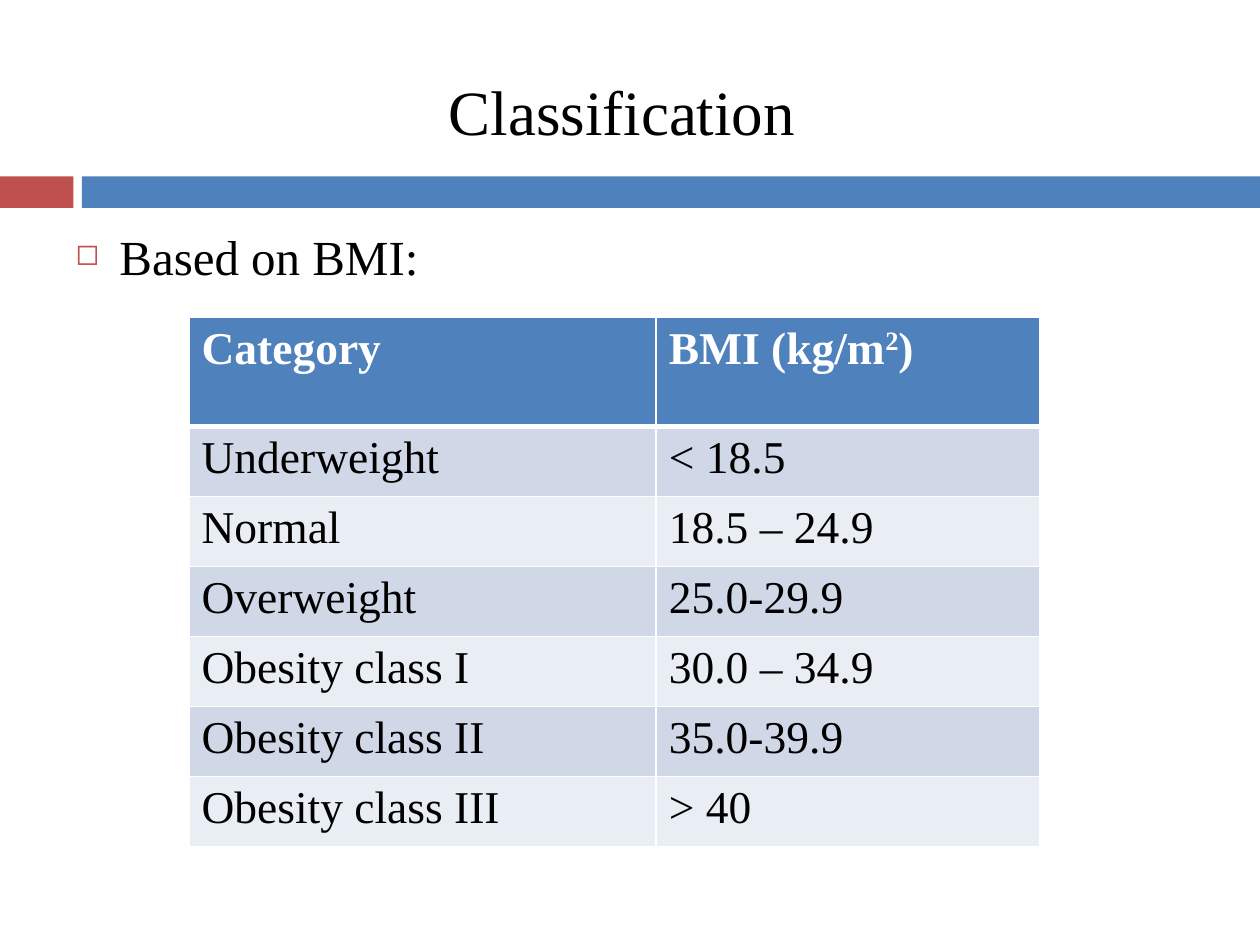
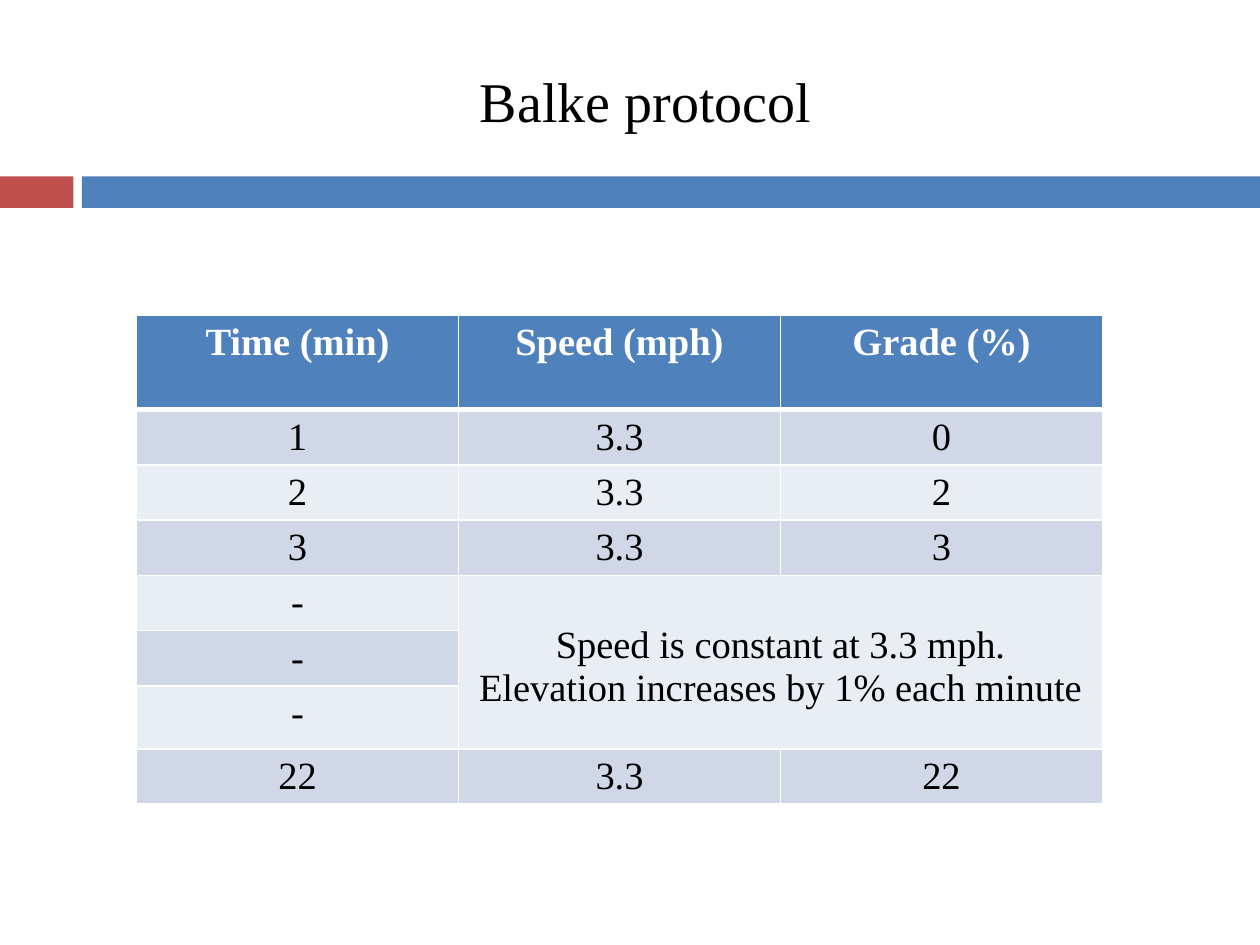
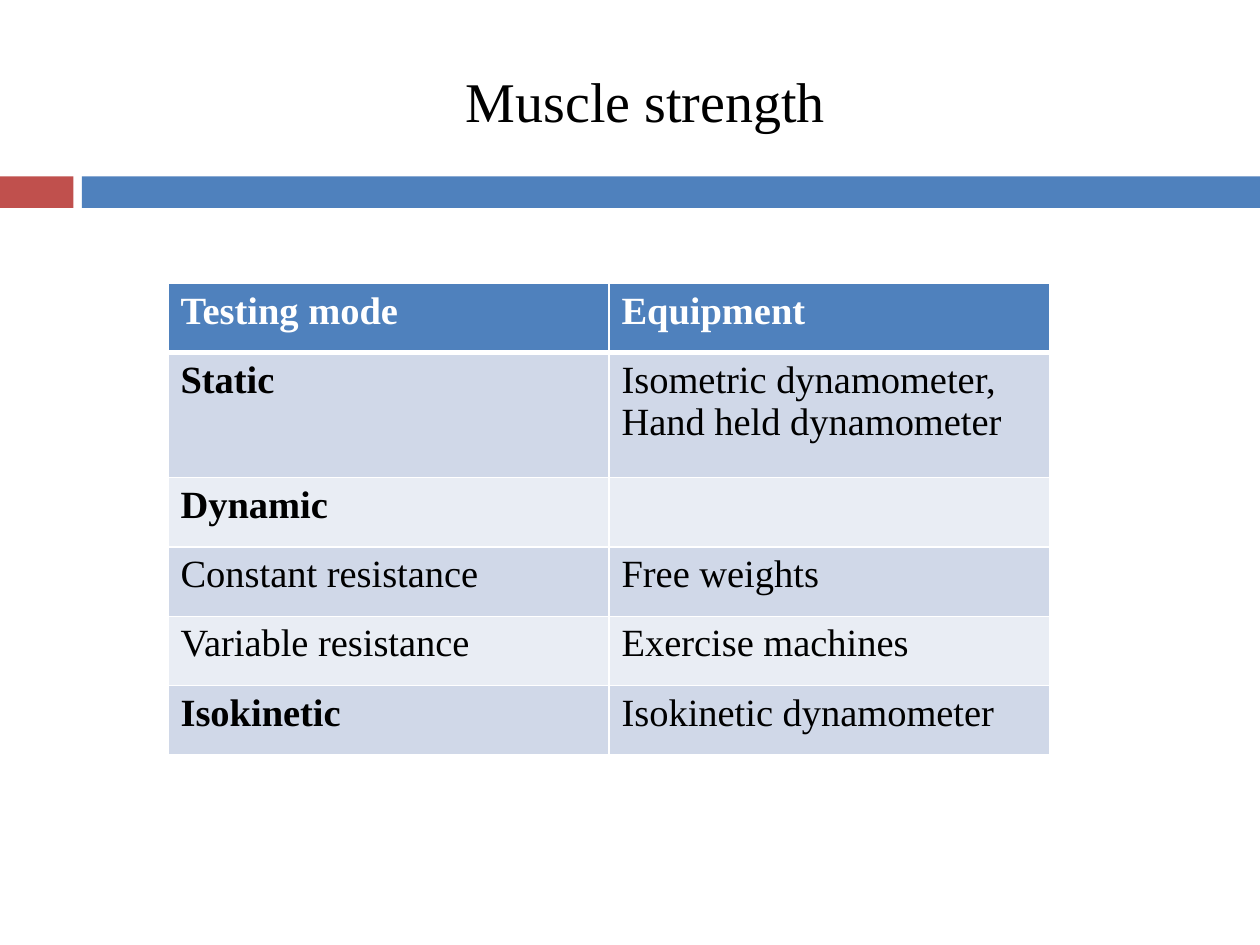
from lxml.etree import SubElement
from pptx import Presentation
from pptx.dml.color import RGBColor
from pptx.enum.shapes import MSO_SHAPE
from pptx.enum.text import MSO_ANCHOR, MSO_AUTO_SIZE, PP_ALIGN
from pptx.oxml.ns import qn
from pptx.util import Inches, Pt

FONT = "Times New Roman"
BLACK, WHITE = "000000", "FFFFFF"
BLUE, RED = "4F81BD", "C0504D"
STRIPES = ["E9EDF4", "D0D8E8"]
COLUMNS, ROWS = 120, 90


def color(hex_text):
    return RGBColor.from_string(hex_text)


def write(text_frame, text, size=22, ink=BLACK, bold=False, align=PP_ALIGN.LEFT):
    for index, line in enumerate(text.split("\n")):
        paragraph = text_frame.add_paragraph() if index else text_frame.paragraphs[0]
        paragraph.alignment = align
        for part, content in enumerate(line.split("^")):
            if not content:
                continue
            run = paragraph.add_run()
            run.text = content
            run.font.name = FONT
            run.font.size = Pt(size)
            run.font.bold = bold
            run.font.color.rgb = color(ink)
            if part % 2:
                run.font._element.set("baseline", "30000")


def add_bullet(paragraph, symbol, ink, percent):
    properties = paragraph._p.get_or_add_pPr()
    indent = Inches(0.35)
    properties.set("marL", str(indent))
    properties.set("indent", str(-indent))
    bullet_color = SubElement(properties, qn("a:buClr"))
    SubElement(bullet_color, qn("a:srgbClr"), val=ink)
    SubElement(properties, qn("a:buSzPct"), val=str(percent * 1000))
    SubElement(properties, qn("a:buChar"), char=symbol)


def add_borders(cell, **widths):
    properties = cell._tc.get_or_add_tcPr()
    for side in "LRTB":
        line = SubElement(properties, qn(f"a:ln{side}"), w=str(Pt(widths.get(side, 1))))
        fill = SubElement(line, qn("a:solidFill"))
        SubElement(fill, qn("a:srgbClr"), val=WHITE)


class Deck:
    def __init__(self):
        self.presentation = Presentation()
        self.presentation.slide_width = Inches(10)
        self.presentation.slide_height = Inches(7.5)
        self.column = self.presentation.slide_width / COLUMNS
        self.row = self.presentation.slide_height / ROWS
        self.slide = None

    def place(self, left, top, width, height):
        return (round(left * self.column), round(top * self.row),
                round(width * self.column), round(height * self.row))

    def add_slide(self, title, area=(8, 3, 107, 13), size=32):
        self.slide = self.presentation.slides.add_slide(self.presentation.slide_layouts[5])
        self.band(0, 7, RED)
        self.band(7.8, COLUMNS - 7.8, BLUE)
        shape = self.slide.shapes.title
        shape.left, shape.top, shape.width, shape.height = self.place(*area)
        shape.text_frame.auto_size = MSO_AUTO_SIZE.NONE
        shape.text_frame.vertical_anchor = MSO_ANCHOR.MIDDLE
        write(shape.text_frame, title, size=size, align=PP_ALIGN.CENTER)

    def band(self, left, width, ink):
        shape = self.slide.shapes.add_shape(MSO_SHAPE.RECTANGLE, *self.place(left, 16.8, width, 3))
        shape.shadow.inherit = False
        shape.fill.solid()
        shape.fill.fore_color.rgb = color(ink)
        shape.line.fill.background()

    def bullet_text(self, text, area, size):
        text_frame = self.slide.shapes.add_textbox(*self.place(*area)).text_frame
        text_frame.word_wrap = True
        add_bullet(text_frame.paragraphs[0], "◻", RED, 60)
        write(text_frame, text, size=size)

    def table(self, left, top, widths, heights, content, size=22,
              align=PP_ALIGN.LEFT, bold_labels=()):
        area = self.place(left, top, sum(widths), sum(heights))
        table = self.slide.shapes.add_table(len(heights), len(widths), *area).table
        for column, width in zip(table.columns, widths):
            column.width = round(width * self.column)
        for row, height in zip(table.rows, heights):
            row.height = round(height * self.row)
        for row_index, texts in enumerate(content):
            header = row_index == 0
            for column_index, text in enumerate(texts):
                cell = table.cell(row_index, column_index)
                add_borders(cell, T=3 if row_index == 1 else 1, B=3 if header else 1)
                cell.fill.solid()
                cell.fill.fore_color.rgb = color(BLUE if header else STRIPES[row_index % 2])
                write(cell.text_frame, text, size=size, ink=WHITE if header else BLACK,
                      bold=header or text in bold_labels, align=align)
        return table


def main():
    deck = Deck()

    deck.add_slide("Classification ", area=(6, 5, 108, 11), size=36)
    deck.bullet_text("Based on BMI:", (6, 21, 108, 62), size=28)
    deck.table(18, 30.24, [44.5, 36.5], [10.4] + [6.67] * 6, [
        ("Category", "BMI (kg/m^2^)"),
        ("Underweight", "< 18.5"),
        ("Normal", "18.5 – 24.9"),
        ("Overweight", "25.0-29.9"),
        ("Obesity class I", "30.0 – 34.9"),
        ("Obesity class II", "35.0-39.9"),
        ("Obesity class III", "> 40"),
    ], size=26)

    deck.add_slide("Balke protocol")
    constant_speed = "Speed is constant at 3.3 mph.\nElevation increases by 1% each minute"
    protocol = deck.table(13, 30, [92 / 3] * 3, [9] + [5.25] * 5 + [6, 5.25], [
        ("Time (min)", "Speed (mph)", "Grade (%)"),
        ("1", "3.3", "0"),
        ("2", "3.3", "2"),
        ("3", "3.3", "3"),
        ("-", constant_speed, ""),
        ("-", "", ""),
        ("-", "", ""),
        ("22", "3.3", "22"),
    ], align=PP_ALIGN.CENTER)
    speed_note = protocol.cell(4, 1)
    speed_note.merge(protocol.cell(6, 2))
    speed_note.margin_top = Inches(0.39)

    deck.add_slide("Muscle strength")
    deck.table(16, 27, [42, 42], [6.6, 11.9] + [6.6] * 4, [
        ("Testing mode", "Equipment"),
        ("Static", "Isometric dynamometer, Hand held dynamometer"),
        ("Dynamic", ""),
        ("Constant resistance", "Free weights"),
        ("Variable resistance", "Exercise machines"),
        ("Isokinetic", "Isokinetic dynamometer"),
    ], bold_labels=("Static", "Dynamic", "Isokinetic"))

    deck.presentation.save("out.pptx")


if __name__ == "__main__":
    main()
